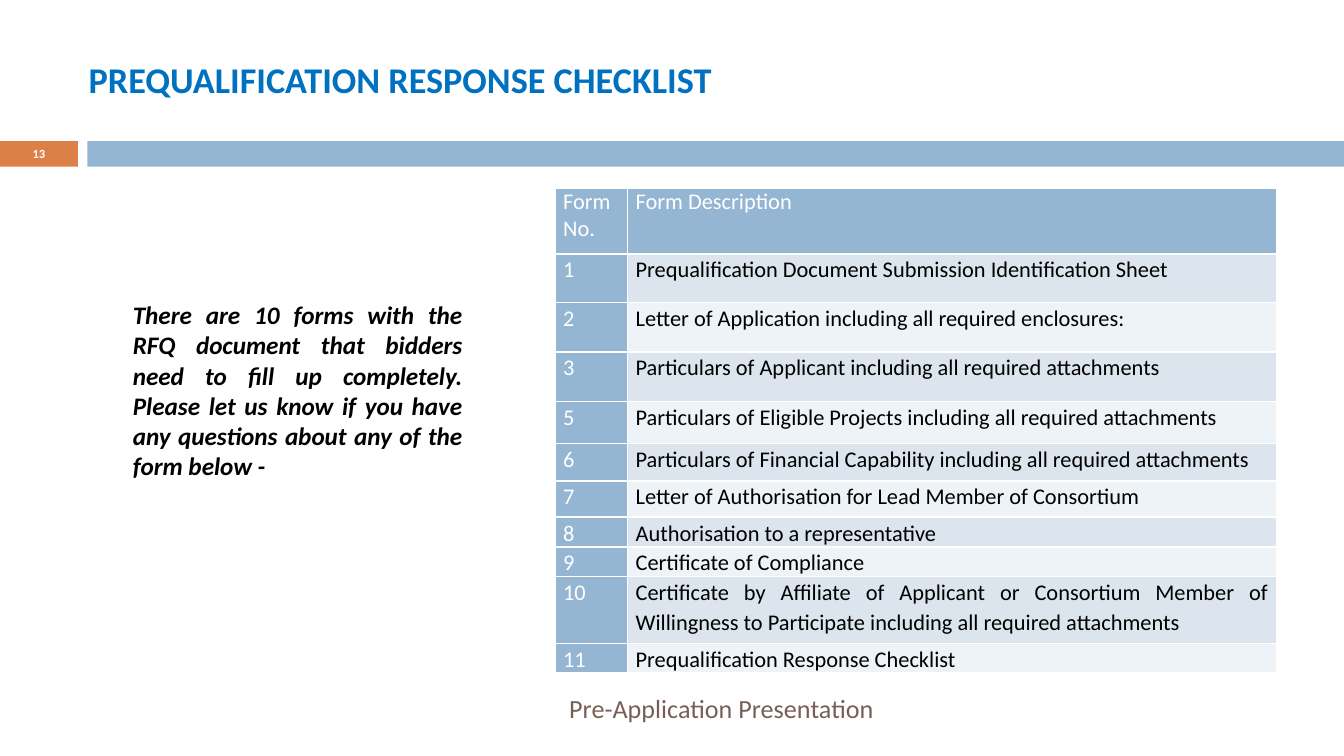
from lxml import etree
from pptx import Presentation
from pptx.dml.color import RGBColor
from pptx.enum.shapes import MSO_SHAPE
from pptx.enum.text import MSO_ANCHOR, PP_ALIGN
from pptx.oxml.ns import qn
from pptx.util import Inches, Pt

RECTANGLE = MSO_SHAPE.RECTANGLE
TOP, MIDDLE = MSO_ANCHOR.TOP, MSO_ANCHOR.MIDDLE
LEFT, CENTER, RIGHT, JUSTIFY = PP_ALIGN.LEFT, PP_ALIGN.CENTER, PP_ALIGN.RIGHT, PP_ALIGN.JUSTIFY

WHITE = RGBColor(0xFF, 0xFF, 0xFF)
BLACK = RGBColor(0x00, 0x00, 0x00)
BLUE = RGBColor(0x00, 0x70, 0xC0)
STEEL = RGBColor(0x94, 0xB6, 0xD2)
ORANGE = RGBColor(0xDD, 0x80, 0x47)
BROWN = RGBColor(0x77, 0x5F, 0x55)
BANDS = (RGBColor(0xDC, 0xE5, 0xEE), RGBColor(0xEE, 0xF3, 0xF7))
FONT = "Calibri"
SLIDE_WIDTH = Inches(10)
SLIDE_HEIGHT = SLIDE_WIDTH * 9 // 16

TITLE = "PREQUALIFICATION RESPONSE CHECKLIST"
INTRO = (
    "There are 10 forms with the RFQ document that bidders need to fill up completely. "
    "Please let us know if you have any questions about any of the form below -"
)
FOOTER = "Pre-Application Presentation"
SLIDE_NUMBER = "13"
BARS = [(0, 0.58, ORANGE), (0.65, 9.35, STEEL)]
COLUMN_WIDTHS = (0.54, 4.83)
FORMS = [
    ("Form No.", "Form Description", 0.49),
    ("1", "Prequalification Document Submission Identification Sheet", 0.36),
    ("2", "Letter of Application including all required enclosures:", 0.37),
    ("3", "Particulars of Applicant including all required attachments", 0.37),
    ("5", "Particulars of Eligible Projects including all required attachments", 0.31),
    ("6", "Particulars of Financial Capability including all required attachments", 0.28),
    ("7", "Letter of Authorisation for Lead Member of Consortium", 0.27),
    ("8", "Authorisation to a representative ", 0.22),
    ("9", "Certificate of Compliance", 0.22),
    ("10", "Certificate by Affiliate of Applicant or Consortium Member of Willingness "
           "to Participate including all required attachments", 0.5),
    ("11", "Prequalification Response Checklist", 0.22),
]


def write(frame, text, size, color, align=LEFT, bold=False, italic=False):
    frame.word_wrap = True
    paragraph = frame.paragraphs[0]
    paragraph.alignment = align
    run = paragraph.add_run()
    run.text = text
    font = run.font
    font.name, font.size, font.bold, font.italic = FONT, Pt(size), bold, italic
    font.color.rgb = color
    return paragraph


def add_text(slide, box, anchor, *text_format):
    frame = slide.shapes.add_textbox(*map(Inches, box)).text_frame
    frame.vertical_anchor = anchor
    write(frame, *text_format)


def add_bar(slide, left, width, color):
    bar = slide.shapes.add_shape(
        RECTANGLE, Inches(left), Inches(1.05), Inches(width), Inches(0.19))
    bar.shadow.inherit = False
    bar.fill.solid()
    bar.fill.fore_color.rgb = color
    bar.line.fill.background()


def add_title(slide):
    title = slide.shapes.title
    title.left, title.top, title.width, title.height = map(Inches, (0.59, 0.47, 8.11, 0.31))
    frame = title.text_frame
    frame.vertical_anchor = MIDDLE
    frame.margin_left = frame.margin_right = Inches(0.07)
    frame.margin_top = frame.margin_bottom = Inches(0.04)
    write(frame, TITLE, 19.4, BLUE, bold=True).line_spacing = 0.7


def set_borders(cell):
    properties = cell._tc.get_or_add_tcPr()
    for position, side in enumerate(("lnL", "lnR", "lnT", "lnB")):
        line = etree.Element(qn(f"a:{side}"), w=str(Pt(1)))
        fill = etree.SubElement(line, qn("a:solidFill"))
        etree.SubElement(fill, qn("a:srgbClr"), val=str(WHITE))
        properties.insert(position, line)


def add_forms_table(slide):
    height = sum(form[-1] for form in FORMS)
    table = slide.shapes.add_table(
        len(FORMS), len(COLUMN_WIDTHS), Inches(4.13), Inches(1.4),
        Inches(sum(COLUMN_WIDTHS)), Inches(height)).table
    for column, width in zip(table.columns, COLUMN_WIDTHS):
        column.width = Inches(width)
    for row_index, (*texts, row_height) in enumerate(FORMS):
        table.rows[row_index].height = Inches(row_height)
        is_header = row_index == 0
        for column_index, text in enumerate(texts):
            is_steel = is_header or column_index == 0
            cell = table.cell(row_index, column_index)
            cell.margin_left = cell.margin_right = Inches(0.06)
            cell.margin_top = cell.margin_bottom = 0
            cell.fill.solid()
            cell.fill.fore_color.rgb = STEEL if is_steel else BANDS[(row_index - 1) % 2]
            set_borders(cell)
            paragraph = write(cell.text_frame, text, 12, WHITE if is_steel else BLACK,
                              LEFT if is_header else JUSTIFY)
            paragraph.space_before = paragraph.space_after = Pt(5.5)
            if not is_header:
                paragraph.line_spacing = 1.1


def main():
    presentation = Presentation()
    presentation.slide_width, presentation.slide_height = SLIDE_WIDTH, SLIDE_HEIGHT
    slide = presentation.slides.add_slide(presentation.slide_layouts[5])
    for bar in BARS:
        add_bar(slide, *bar)
    add_text(slide, (0.67, 5.12, 5.93, 0.3), MIDDLE, FOOTER, 14, BROWN, RIGHT)
    add_text(slide, (0, 1.04, 0.58, 0.2), MIDDLE, SLIDE_NUMBER, 6.7, WHITE, CENTER, True)
    add_title(slide)
    add_forms_table(slide)
    add_text(slide, (0.89, 2.18, 2.65, 1.24), TOP, INTRO, 13.5, BLACK, JUSTIFY, True, True)
    presentation.save("out.pptx")


if __name__ == "__main__":
    main()
